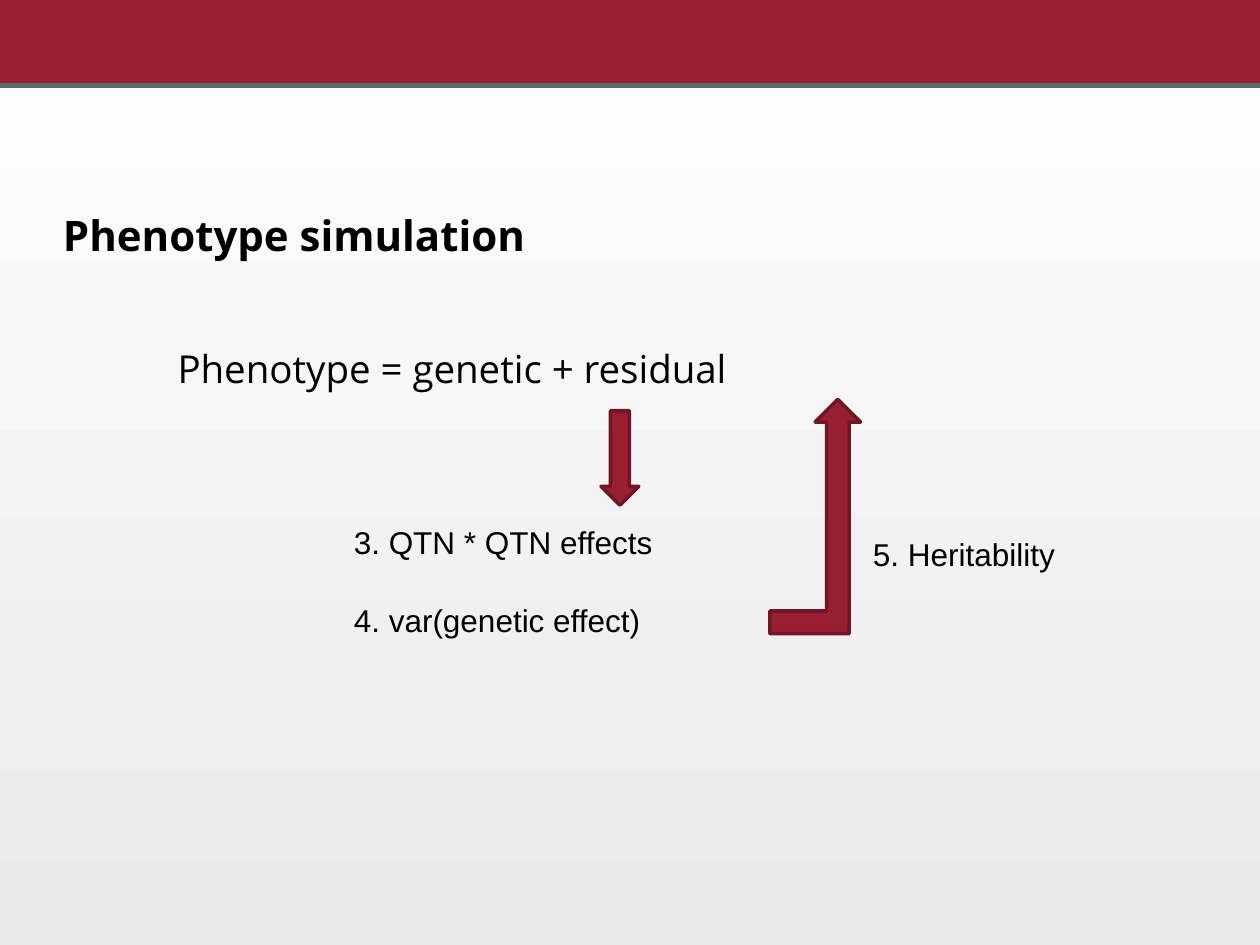
"""Build the phenotype simulation slide."""
from lxml import etree
from pptx import Presentation, util as u
from pptx.dml.color import RGBColor
from pptx.enum import shapes, text
from pptx.oxml.ns import qn


def color(value):
    return RGBColor.from_string(value)


presentation = Presentation()
presentation.slide_width, presentation.slide_height = u.Inches(10), u.Inches(7.5)
slide = presentation.slides.add_slide(presentation.slide_layouts[6])

background = slide.background.fill
background.gradient()
background.gradient_angle = 90
for stop, position, value in zip(background.gradient_stops, (0, 1), ("EAEAEA", "FFFFFF")):
    stop.position = position
    stop.color.rgb = color(value)

preset = shapes.MSO_SHAPE
blocks = [
    (preset.RECTANGLE, (0, 0, 10, 0.67), None),
    (preset.DOWN_ARROW, (4.77, 3.26, 0.3, 0.75), "701625"),
    (preset.BENT_UP_ARROW, (6.11, 3.17, 0.72, 1.86), "701625"),
]
for kind, place, outline in blocks:
    shape = slide.shapes.add_shape(kind, *map(u.Inches, place))
    shape.shadow.inherit = False
    shape.fill.solid()
    shape.fill.fore_color.rgb = color("981E32")
    if outline:
        shape.line.color.rgb = color(outline)
        shape.line.width = u.Pt(2)
    else:
        shape.line.fill.background()

rule = slide.shapes.add_connector(
    shapes.MSO_CONNECTOR.STRAIGHT, u.Inches(-0.02), u.Inches(0.68), u.Inches(10), u.Inches(0.68))
rule.line.color.rgb = color("5E6A71")
rule.line.width = u.Pt(3)
etree.SubElement(rule._element.spPr, qn("a:effectLst"))

title_font = {"name": "Open Sans", "size": u.Pt(24), "bold": True}
equation_font = {"name": "Open Sans", "size": u.Pt(22)}
step_font = {"name": "Arial", "size": u.Pt(18)}
top, bottom = text.MSO_ANCHOR.TOP, text.MSO_ANCHOR.BOTTOM
boxes = [
    ((0, 1.66, 10, 0.46), 0.5, bottom, title_font, {"line_spacing": 0.9},
     ["Phenotype simulation"]),
    ((0.73, 2.69, 8.37, 0.47), 0.68, top, equation_font, {},
     ["Phenotype = genetic + residual"]),
    ((2.71, 4.1, 4.4, 1.01), 0.1, top, step_font, {},
     ["3. QTN * QTN effects", "4. var(genetic effect)"]),
    ((6.83, 4.2, 2.03, 0.4), 0.1, top, step_font, {}, ["5. Heritability"]),
]
for place, inset, anchor, font, spacing, lines in boxes:
    frame = slide.shapes.add_textbox(*map(u.Inches, place)).text_frame
    frame.word_wrap = True
    frame.vertical_anchor = anchor
    frame.margin_left = u.Inches(inset)
    for index, line in enumerate(lines):
        paragraph = frame.add_paragraph() if index else frame.paragraphs[0]
        paragraph.text = line
        if index:
            paragraph.space_before = u.Pt(23)
        for name, value in spacing.items():
            setattr(paragraph, name, value)
        for name, value in font.items():
            setattr(paragraph.font, name, value)
        paragraph.font.color.rgb = color("000000")

presentation.save("out.pptx")
